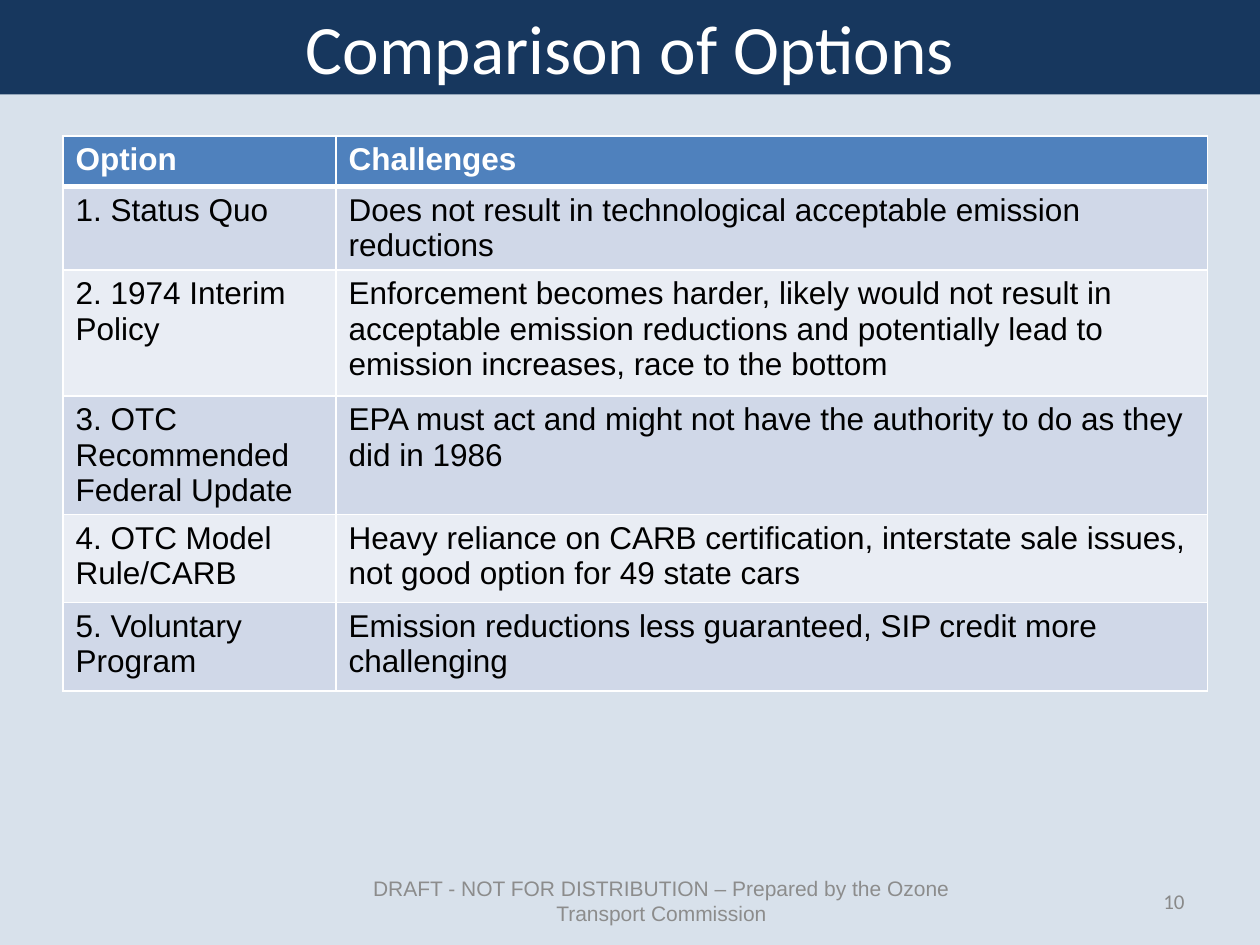
from dataclasses import dataclass

from lxml.etree import SubElement
from pptx import Presentation
from pptx.dml.color import RGBColor
from pptx.enum.text import MSO_ANCHOR, MSO_AUTO_SIZE, PP_ALIGN
from pptx.oxml.ns import qn
from pptx.util import Pt

COLORS = {
    "background": "D8E1EB",
    "banner": "17375E",
    "header": "4F81BD",
    "band_dark": "D0D8E8",
    "band_light": "E9EDF4",
    "white": "FFFFFF",
    "black": "000000",
    "footer": "8C8C8C",
    "number": "898989",
}


@dataclass(frozen=True)
class TextStyle:
    font: str
    size: float
    color: str
    bold: bool = False
    align: PP_ALIGN = PP_ALIGN.LEFT


@dataclass(frozen=True)
class OptionRow:
    option: str
    challenges: str
    height: float


@dataclass(frozen=True)
class FooterItem:
    text: str
    left: float
    width: float
    style: TextStyle


TITLE_STYLE = TextStyle("Calibri", 39.6, "white", align=PP_ALIGN.CENTER)
HEADER_STYLE = TextStyle("Arial", 18, "white", bold=True)
BODY_STYLE = TextStyle("Arial", 18, "black")

COLUMN_WIDTHS = (156, 498)
ROWS = [
    OptionRow("Option", "Challenges", 29),
    OptionRow("1. Status Quo",
              "Does not result in technological acceptable emission reductions", 29),
    OptionRow("2. 1974 Interim Policy",
              "Enforcement becomes harder, likely would not result in acceptable "
              "emission reductions and potentially lead to emission increases, "
              "race to the bottom", 72),
    OptionRow("3. OTC Recommended Federal Update",
              "EPA must act and might not have the authority to do as they did in 1986",
              50.4),
    OptionRow("4. OTC Model Rule/CARB",
              "Heavy reliance on CARB certification, interstate sale issues, "
              "not good option for 49 state cars", 50.4),
    OptionRow("5. Voluntary Program",
              "Emission reductions less guaranteed, SIP credit more challenging", 50.4),
]
FOOTERS = [
    FooterItem("DRAFT - NOT FOR DISTRIBUTION – Prepared by the Ozone Transport Commission",
               192, 372, TextStyle("Arial", 12, "footer", align=PP_ALIGN.CENTER)),
    FooterItem("10", 588, 96, TextStyle("Calibri", 12, "number", align=PP_ALIGN.RIGHT)),
]


def set_fill(fill, color: str) -> None:
    fill.solid()
    fill.fore_color.rgb = RGBColor.from_string(COLORS[color])


def write_text(text_frame, text: str, style: TextStyle) -> None:
    text_frame.text = text
    text_frame.word_wrap = True
    paragraph = text_frame.paragraphs[0]
    paragraph.alignment = style.align
    font = paragraph.runs[0].font
    font.name, font.size, font.bold = style.font, Pt(style.size), style.bold
    font.color.rgb = RGBColor.from_string(COLORS[style.color])


def set_borders(cell, top: float, bottom: float) -> None:
    properties = cell._tc.get_or_add_tcPr()
    for side, width in (("L", 1), ("R", 1), ("T", top), ("B", bottom)):
        line = SubElement(properties, qn(f"a:ln{side}"), w=str(Pt(width)))
        fill = SubElement(line, qn("a:solidFill"))
        SubElement(fill, qn("a:srgbClr"), val=COLORS["white"])


def add_title(slide, text: str) -> None:
    title = slide.shapes.title
    title.left, title.top, title.width, title.height = Pt(0), Pt(0), Pt(720), Pt(54)
    set_fill(title.fill, "banner")
    write_text(title.text_frame, text, TITLE_STYLE)
    title.text_frame.auto_size = MSO_AUTO_SIZE.NONE
    title.text_frame.vertical_anchor = MSO_ANCHOR.MIDDLE


def add_options_table(slide, rows: list[OptionRow]) -> None:
    table = slide.shapes.add_table(
        len(rows), len(COLUMN_WIDTHS), Pt(36), Pt(77.76),
        Pt(sum(COLUMN_WIDTHS)), Pt(sum(row.height for row in rows))).table
    for column, width in zip(table.columns, COLUMN_WIDTHS):
        column.width = Pt(width)
    for index, row in enumerate(rows):
        table.rows[index].height = Pt(row.height)
        is_header = index == 0
        band = "header" if is_header else "band_dark" if index % 2 else "band_light"
        for column_index, text in enumerate((row.option, row.challenges)):
            cell = table.cell(index, column_index)
            # The rule below the header is heavier than the other borders
            set_borders(cell, 3 if index == 1 else 1, 3 if is_header else 1)
            set_fill(cell.fill, band)
            write_text(cell.text_frame, text, HEADER_STYLE if is_header else BODY_STYLE)


def add_footer(slide, item: FooterItem) -> None:
    box = slide.shapes.add_textbox(Pt(item.left), Pt(500.5), Pt(item.width), Pt(28.75))
    write_text(box.text_frame, item.text, item.style)
    box.text_frame.vertical_anchor = MSO_ANCHOR.MIDDLE


def main() -> None:
    presentation = Presentation()
    presentation.slide_width, presentation.slide_height = Pt(720), Pt(540)
    slide = presentation.slides.add_slide(
        presentation.slide_layouts.get_by_name("Title Only"))
    set_fill(slide.background.fill, "background")

    # Title banner
    add_title(slide, "Comparison of Options")
    # Options and their challenges
    add_options_table(slide, ROWS)
    # Footer and slide number
    for item in FOOTERS:
        add_footer(slide, item)

    presentation.save("out.pptx")


if __name__ == "__main__":
    main()
